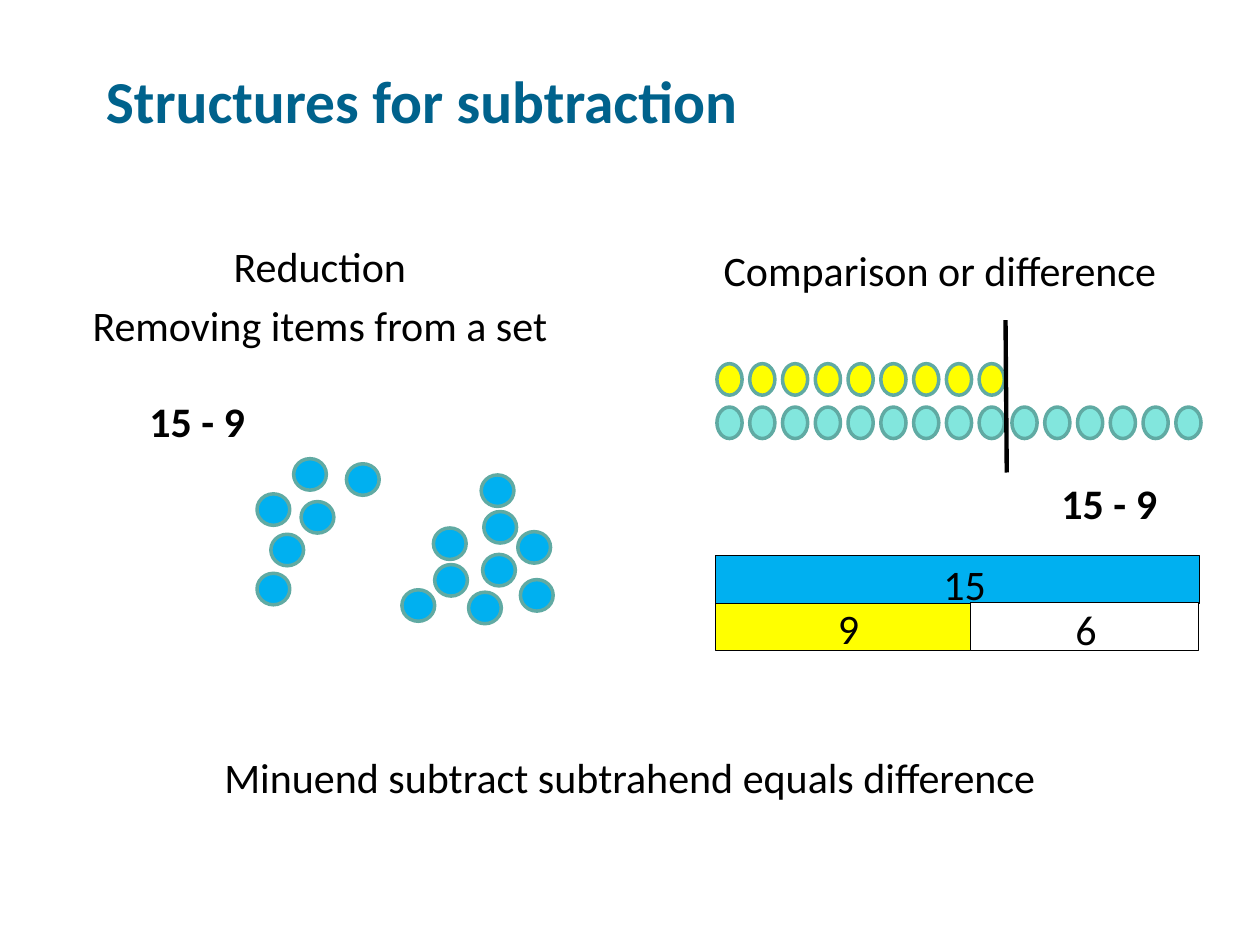
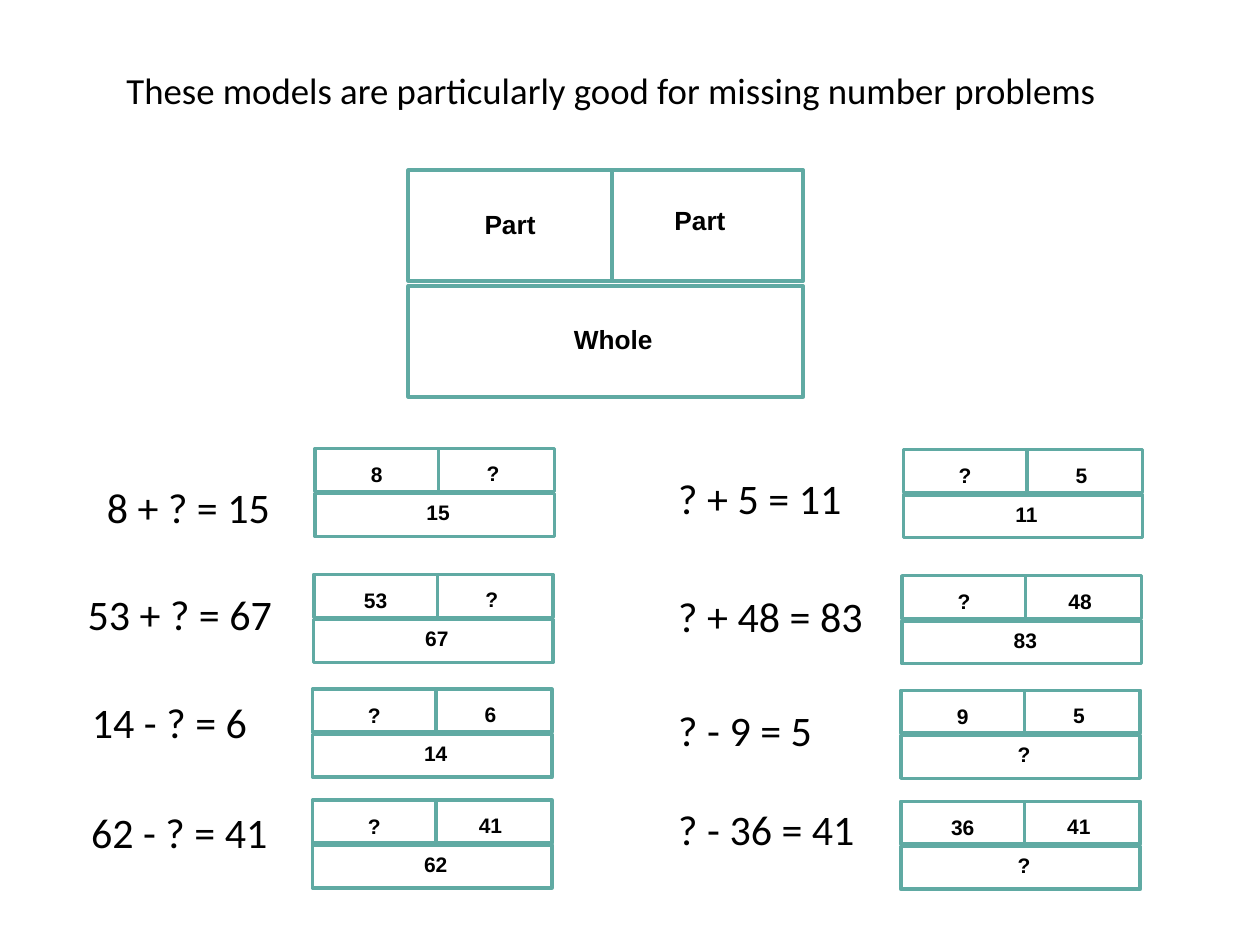
"""Build two slides on bar models for subtraction and missing numbers."""
import pptx
import pptx.util
import pptx.dml.color
import pptx.enum.shapes
import pptx.enum.text
import pptx.oxml

Pt = pptx.util.Pt
RGB = pptx.dml.color.RGBColor.from_string
Kind = pptx.enum.shapes.MSO_SHAPE
Align = pptx.enum.text.PP_ALIGN
Anchor = pptx.enum.text.MSO_ANCHOR


class Theme:
    """Colours, fonts and type sizes."""
    ink, title, edge = "000000", "00628C", "60AAA3"
    blue, teal, yellow, white = "00B0F0", "82E6DD", "FFFF00", "FFFFFF"
    sans, bold = "Calibri", "Arial"
    head, lead, body, key, cell = 34, 21, 24, 15, 12


TITLE = ("Structures for subtraction", (53.3, 35.3, 503.3, 37.4))
LEAD = ("These models are particularly good for missing number problems",
        (40, 35.3, 618.5, 32.4))

NOTES = [
    (["Reduction", "Removing items from a set"], (44.6, 133.9, 276.5, 71.3), False),
    (["15 - 9"], (77.8, 222.5, 69.8, 36), True),
    (["Minuend subtract subtrahend equals difference"],
     (64.8, 426.2, 590.4, 36), False),
    (["Comparison or difference"], (404.6, 136.1, 265, 36), False),
    (["15 - 9"], (599, 269.3, 69.8, 36), True),
]

KEPT = [(167.8, 262.1), (198, 265), (154.8, 305.3), (172.1, 286.6),
        (146.9, 282.2), (146.9, 327.6)]
TAKEN = [(247.7, 301.7), (276.5, 292.3), (267.8, 338.4), (248.4, 322.6),
         (275, 271.4), (295.9, 303.8), (275.8, 316.8), (229.7, 337),
         (297.4, 331.2)]
BEADS = [(9, 207.8, Theme.yellow), (15, 232.6, Theme.teal)]
BEAD_X, BEAD_GAP = 409.7, 18.73
CUT = (574.6, 182.9, 575.3, 270)

BARS = [
    ("9", (409, 344.2, 149.8, 27.4), Theme.yellow, (1, 1)),
    ("15", (409, 317.5, 276.5, 27.4), Theme.blue, (4, 2.5)),
    ("6", (554.4, 344.2, 130.3, 27.4), Theme.white, (1, 1.5)),
]

KEY = ("Part", "Part", "Whole")
KEY_AT = (233.3, 97.2)
KEY_DIM = (116.3, 109.4, 63.4, 66.2)
KEY_NUDGE = ((0, -1), (-4.3, -3), (4.3, -1.5))
SUM_DIM = (70.6, 66.2, 24.5, 25.8)
SUM_NUDGE = ((0, 2.5), (-2, 2), (2, -1.5))

ROW_AT = [(180, 256.3), (179.3, 328.3), (178.6, 393.8), (178.6, 457.2)]
RIGHT = (336.2, 0.7)
LEFT_SUMS = [
    ("8 + ? = 15", (54, 271.4), ("8", "?", "15")),
    ("53 + ? = 67", (43, 332.6), ("53", "?", "67")),
    ("14 - ? = 6", (45.5, 394.6), ("?", "6", "14")),
    ("62 - ? = 41", (45, 457.2), ("?", "41", "62")),
]
RIGHT_SUMS = [
    ("? + 5 = 11", (380.5, 266.4), ("?", "5", "11")),
    ("? + 48 = 83", (380.5, 334.1), ("?", "48", "83")),
    ("? - 9 = 5", (380.5, 398.9), ("9", "5", "?")),
    ("? - 36 = 41", (380.5, 455.8), ("36", "41", "?")),
]


def style(para, size, font=Theme.sans, color=Theme.ink, bold=False, align=Align.CENTER):
    """Format a paragraph and its runs."""
    para.alignment = align
    for run in para.runs:
        run.font.size, run.font.name, run.font.bold = Pt(size), font, bold
        run.font.color.rgb = RGB(color)


def head(slide, text, box, size, **look):
    """Place and format the slide title."""
    shape = slide.shapes.title
    shape.left, shape.top, shape.width, shape.height = map(Pt, box)
    frame = shape.text_frame
    frame.text = text
    frame.auto_size = pptx.enum.text.MSO_AUTO_SIZE.NONE
    frame.vertical_anchor = Anchor.MIDDLE
    style(frame.paragraphs[0], size, **look)
    return frame


def note(slide, lines, box, bold=False, align=Align.CENTER):
    """Add a free text box, one paragraph a line."""
    frame = slide.shapes.add_textbox(*map(Pt, box)).text_frame
    frame.word_wrap = False
    frame.text = "\n".join(lines)
    for i, para in enumerate(frame.paragraphs):
        style(para, Theme.body, bold=bold, align=align)
        if i:
            para.space_before = Pt(4.8)


def form(slide, kind, box, fill=None, edge=Theme.edge, width=2):
    """Add a flat shape with an outline."""
    shape = slide.shapes.add_shape(kind, *map(Pt, box))
    shape.shadow.inherit = False
    if fill:
        shape.fill.solid()
        shape.fill.fore_color.rgb = RGB(fill)
    else:
        shape.fill.background()
    shape.line.color.rgb, shape.line.width = RGB(edge), Pt(width)
    return shape


def label(shape, text, nudge, size, **look):
    """Write text in a shape, moved off its centre by the nudge."""
    dx, dy = nudge
    frame = shape.text_frame
    frame.word_wrap = False
    frame.vertical_anchor = Anchor.MIDDLE
    frame.margin_left, frame.margin_right = Pt(max(2 * dx, 0)), Pt(max(-2 * dx, 0))
    frame.margin_top, frame.margin_bottom = Pt(max(2 * dy, 0)), Pt(max(-2 * dy, 0))
    frame.text = text
    style(frame.paragraphs[0], size, **look)


def model(slide, words, at, dim, nudges, size):
    """Draw two parts above their whole."""
    x, y = at
    one, two, high, drop = dim
    boxes = [(x, y, one, high), (x + one, y, two, high),
             (x, y + drop, one + two, high)]
    for word, box, nudge in zip(words, boxes, nudges):
        label(form(slide, Kind.RECTANGLE, box), word, nudge, size,
              font=Theme.bold, bold=True)


def rule(slide, ends):
    """Draw the line that marks the difference."""
    line = slide.shapes.add_connector(
        pptx.enum.shapes.MSO_CONNECTOR.STRAIGHT, *map(Pt, ends))
    line.line.color.rgb, line.line.width = RGB(Theme.ink), Pt(2.5)
    props = line._element.spPr
    props.append(props.makeelement(pptx.oxml.ns.qn("a:effectLst"), {}))


def types(slide):
    """Fill the slide on reduction and difference."""
    frame = head(slide, *TITLE, Theme.head, color=Theme.title, bold=True, align=Align.LEFT)
    frame.paragraphs[0].line_spacing = 1.14
    for lines, box, bold in NOTES:
        note(slide, lines, box, bold)
    for x, y in KEPT + TAKEN:
        form(slide, Kind.OVAL, (x, y, 18.7, 18), Theme.blue)
    for count, y, fill in BEADS:
        for i in range(count):
            form(slide, Kind.OVAL, (BEAD_X + i * BEAD_GAP, y, 14.4, 18), fill)
    rule(slide, CUT)
    for text, box, fill, nudge in BARS:
        bar = form(slide, Kind.RECTANGLE, box, fill, Theme.ink, 0.75)
        label(bar, text, nudge, Theme.body)


def gaps(slide):
    """Fill the slide on missing numbers."""
    head(slide, *LEAD, Theme.lead)
    model(slide, KEY, KEY_AT, KEY_DIM, KEY_NUDGE, Theme.key)
    for sums, (dx, dy) in ((LEFT_SUMS, (0, 0)), (RIGHT_SUMS, RIGHT)):
        for (text, at, words), (x, y) in zip(sums, ROW_AT):
            note(slide, [text], (*at, 130, 36), align=Align.LEFT)
            model(slide, words, (x + dx, y + dy), SUM_DIM, SUM_NUDGE, Theme.cell)


def main():
    """Build and save the deck."""
    deck = pptx.Presentation()
    deck.slide_width, deck.slide_height = Pt(720), Pt(540)
    for fill in (types, gaps):
        fill(deck.slides.add_slide(deck.slide_layouts[5]))
    deck.save("out.pptx")


if __name__ == "__main__":
    main()
